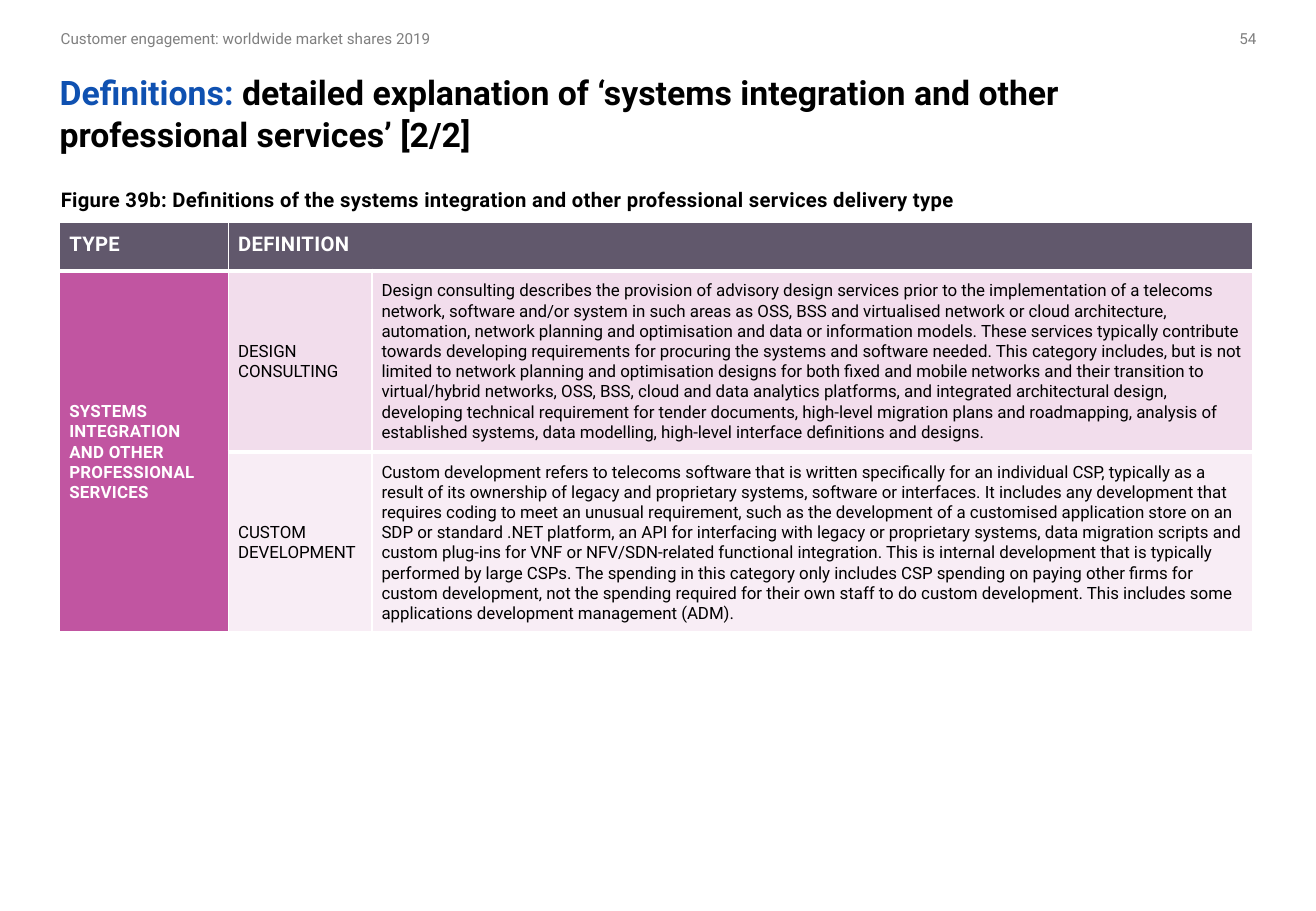
from lxml.etree import SubElement
from pptx import Presentation
from pptx.dml.color import RGBColor
from pptx.enum.text import MSO_ANCHOR, MSO_AUTO_SIZE, PP_ALIGN
from pptx.oxml.ns import qn
from pptx.util import Inches, Pt

FONT = "Roboto"
WHITE = RGBColor(0xFF, 0xFF, 0xFF)
BLACK = RGBColor(0x00, 0x00, 0x00)
GREY = RGBColor(0x7F, 0x7F, 0x7F)
BLUE = RGBColor(0x0F, 0x51, 0xB1)
SLATE = RGBColor(0x61, 0x58, 0x6C)
PINK = RGBColor(0xC1, 0x55, 0xA1)

# Content
REPORT = "Customer engagement: worldwide market shares 2019"
PAGE = "54"
TITLE = [
    ("Definitions: ", BLUE),
    ("detailed explanation of ‘systems integration and other professional services’ [2/2]", BLACK),
]
CAPTION = "Figure 39b: Definitions of the systems integration and other professional services delivery type"
HEADERS = ["TYPE", "DEFINITION"]
SERVICE_TYPE = "SYSTEMS INTEGRATION AND OTHER PROFESSIONAL SERVICES"
# Name, sentences of the definition, tint of the row in percent
DEFINITIONS = [
    ("DESIGN CONSULTING", [
        "Design consulting describes the provision of advisory design services prior to the "
        "implementation of a telecoms network, software and/or system in such areas as OSS, BSS and "
        "virtualised network or cloud architecture, automation, network planning and optimisation "
        "and data or information models.",
        "These services typically contribute towards developing requirements for procuring the "
        "systems and software needed.",
        "This category includes, but is not limited to network planning and optimisation designs "
        "for both fixed and mobile networks and their transition to virtual/hybrid networks, OSS, "
        "BSS, cloud and data analytics platforms, and integrated architectural design, developing "
        "technical requirement for tender documents, high-level migration plans and roadmapping, "
        "analysis of established systems, data modelling, high-level interface definitions and "
        "designs.",
    ], 20),
    ("CUSTOM DEVELOPMENT", [
        "Custom development refers to telecoms software that is written specifically for an "
        "individual CSP, typically as a result of its ownership of legacy and proprietary systems, "
        "software or interfaces.",
        "It includes any development that requires coding to meet an unusual requirement, such as "
        "the development of a customised application store on an SDP or standard .NET platform, an "
        "API for interfacing with legacy or proprietary systems, data migration scripts and custom "
        "plug-ins for VNF or NFV/SDN-related functional integration.",
        "This is internal development that is typically performed by large CSPs.",
        "The spending in this category only includes CSP spending on paying other firms for custom "
        "development, not the spending required for their own staff to do custom development.",
        "This includes some applications development management (ADM).",
    ], 10),
]

# Layout, in inches
LEFT, WIDTH = 0.5, 9.84
TABLE_LEFT, TABLE_TOP = 0.49, 1.83
COLUMNS = [1.39, 1.18, 7.25]
HEADER_HEIGHT, ROW_HEIGHT = 0.4, 1.49
CELL_MARGIN = 0.08


def style_run(r, size, color, bold=False, spacing=0):
    r.font.name, r.font.size, r.font.bold = FONT, Pt(size), bold
    r.font.color.rgb = color
    if spacing:
        r._r.get_or_add_rPr().set("spc", str(round(spacing * 100)))


def place(sp, left, top, width, height, anchor=MSO_ANCHOR.MIDDLE):
    sp.left, sp.top, sp.width, sp.height = map(Inches, (left, top, width, height))
    tf = sp.text_frame
    tf.auto_size, tf.word_wrap = MSO_AUTO_SIZE.NONE, True
    tf.margin_left = tf.margin_right = 0
    tf.margin_top = tf.margin_bottom = Inches(0.05)
    tf.vertical_anchor = anchor
    return tf


def add_page_header(text, left, width, align):
    sp = s.shapes.add_textbox(0, 0, 0, 0)
    tf = place(sp, left, 0.16, width, 0.31)
    tf.text = text
    p = tf.paragraphs[0]
    p.alignment = align
    style_run(p.runs[0], 9, GREY)


def add_borders(cell, top):
    tcPr = cell._tc.get_or_add_tcPr()
    for side, width in (("L", 1), ("R", 1), ("T", top), ("B", 3)):
        ln = SubElement(tcPr, qn(f"a:ln{side}"), w=str(Pt(width)))
        SubElement(SubElement(ln, qn("a:solidFill")), qn("a:srgbClr"), val=str(WHITE))


def fill_cell(cell, text, fill, size=10, color=BLACK, bold=False, tint=100, top=3):
    add_borders(cell, top)
    cell.fill.solid()
    cell.fill.fore_color.rgb = fill
    if tint < 100:
        clr = cell._tc.tcPr.find(qn("a:solidFill")).find(qn("a:srgbClr"))
        SubElement(clr, qn("a:alpha"), val=str(tint * 1000))
    cell.margin_left = cell.margin_right = Inches(CELL_MARGIN)
    cell.margin_top = cell.margin_bottom = Inches(CELL_MARGIN)
    cell.vertical_anchor = MSO_ANCHOR.MIDDLE
    cell.text = text
    if text:
        p = cell.text_frame.paragraphs[0]
        p.line_spacing = Pt(12)
        style_run(p.runs[0], size, color, bold, 0.2 if bold else 0)


prs = Presentation()
prs.slide_width, prs.slide_height = Inches(10.83), Inches(7.5)
s = prs.slides.add_slide(prs.slide_layouts[1])

# Page header
add_page_header(REPORT, LEFT, 3.23, PP_ALIGN.LEFT)
add_page_header(PAGE, 9.59, 0.75, PP_ALIGN.RIGHT)

# Title
p = place(s.shapes.title, TABLE_LEFT, 0.51, WIDTH, 0.83).paragraphs[0]
p.alignment, p.line_spacing = PP_ALIGN.LEFT, Pt(25)
for text, color in TITLE:
    r = p.add_run()
    r.text = text
    style_run(r, 20, color, bold=True)

# Figure caption
tf = place(s.placeholders[1], LEFT, 1.49, WIDTH, 0.28, MSO_ANCHOR.TOP)
tf.text = CAPTION
p = tf.paragraphs[0]
pPr = p._p.get_or_add_pPr()
pPr.set("marL", "0")
pPr.set("indent", "0")
SubElement(pPr, qn("a:buNone"))
p.space_before = Pt(0)
style_run(p.runs[0], 12, BLACK, bold=True, spacing=0.2)

# Definitions table
heights = [HEADER_HEIGHT] + [ROW_HEIGHT] * len(DEFINITIONS)
table = s.shapes.add_table(
    len(heights), len(COLUMNS), Inches(TABLE_LEFT), Inches(TABLE_TOP),
    Inches(sum(COLUMNS)), Inches(sum(heights))).table
for column, width in zip(table.columns, COLUMNS):
    column.width = Inches(width)
for row, height in zip(table.rows, heights):
    row.height = Inches(height)
table.cell(0, 1).merge(table.cell(0, 2))
table.cell(1, 0).merge(table.cell(len(DEFINITIONS), 0))

for col, text in enumerate(HEADERS + [""]):
    fill_cell(table.cell(0, col), text, SLATE, 12, WHITE, bold=True, top=1)
for row, (name, sentences, tint) in enumerate(DEFINITIONS, start=1):
    fill_cell(table.cell(row, 0), SERVICE_TYPE if row == 1 else "", PINK, color=WHITE, bold=True)
    fill_cell(table.cell(row, 1), name, PINK, tint=tint)
    fill_cell(table.cell(row, 2), " ".join(sentences), PINK, tint=tint)

prs.save("out.pptx")
